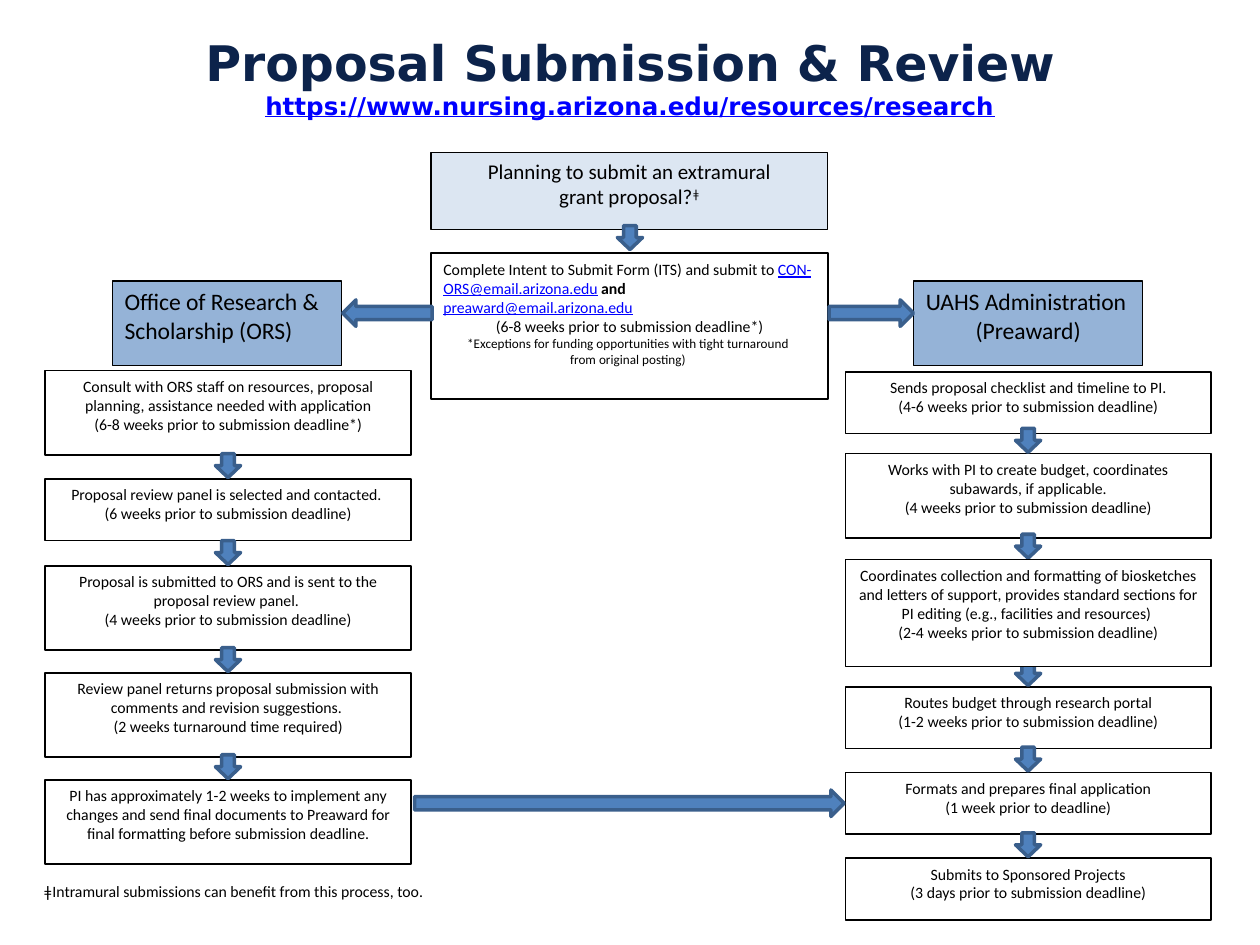
from dataclasses import dataclass

import pptx
import pptx.dml.color
import pptx.enum.shapes
import pptx.enum.text
import pptx.util

Inches = pptx.util.Inches
Shape = pptx.enum.shapes.MSO_SHAPE
Align = pptx.enum.text.PP_ALIGN

BLACK, WHITE, NAVY, LINK = "000000", "FFFFFF", "0C234B", "0000FF"
PALE_BLUE, MID_BLUE = "DCE6F2", "95B3D7"
ARROW_FILL, ARROW_LINE = "4F81BD", "3A5F8C"
STEP_WIDTH, ARROW_WIDTH, ARROW_HEIGHT, ARROW_RISE = 2.9, 0.2, 0.19, 0.2


@dataclass
class Run:
    text: str
    link: bool = False
    bold: bool | None = None
    superscript: bool = False
    break_before: bool = False


@dataclass
class Line:
    runs: list[Run]
    size: float = 9
    align: Align = Align.CENTER
    font: str = "Calibri"
    color: str = BLACK
    bold: bool = False


@dataclass
class Step:
    top: float
    height: float
    lines: list[str]
    fill: str | None = None


def rgb(value: str) -> pptx.dml.color.RGBColor:
    return pptx.dml.color.RGBColor.from_string(value)


def plain(text: str, size: float = 9, align: Align = Align.CENTER) -> Line:
    return Line([Run(text)], size, align)


def write(shape, lines: list[Line], anchor=pptx.enum.text.MSO_ANCHOR.TOP, wrap: bool = True) -> None:
    frame = shape.text_frame
    frame.word_wrap = wrap
    frame.vertical_anchor = anchor
    for index, line in enumerate(lines):
        paragraph = frame.add_paragraph() if index else frame.paragraphs[0]
        paragraph.alignment = line.align
        paragraph.font.name = line.font
        paragraph.font.size = pptx.util.Pt(line.size)
        paragraph.font.bold = line.bold
        paragraph.font.color.rgb = rgb(line.color)
        for part in line.runs:
            if part.break_before:
                paragraph.add_line_break()
            run = paragraph.add_run()
            run.text = part.text
            if part.link:
                run.font.underline = True
                run.font.color.rgb = rgb(LINK)
            if part.bold:
                run.font.bold = True
            if part.superscript:
                run._r.get_or_add_rPr().set("baseline", "30000")


def add_preset(slide, preset, left: float, top: float, width: float, height: float,
               fill: str | None, line: str, weight: float):
    shape = slide.shapes.add_shape(preset, Inches(left), Inches(top), Inches(width), Inches(height))
    shape.shadow.inherit = False
    if fill:
        shape.fill.solid()
        shape.fill.fore_color.rgb = rgb(fill)
    else:
        shape.fill.background()
    shape.line.color.rgb = rgb(line)
    shape.line.width = pptx.util.Pt(weight)
    return shape


def add_box(slide, left: float, top: float, width: float, height: float,
            lines: list[Line], fill: str | None = None, weight: float = 1) -> None:
    write(add_preset(slide, Shape.RECTANGLE, left, top, width, height, fill, BLACK, weight), lines)


def add_arrow(slide, preset, left: float, top: float, width: float, height: float) -> None:
    add_preset(slide, preset, left, top, width, height, ARROW_FILL, ARROW_LINE, 2)


def add_text(slide, left: float, top: float, width: float, height: float, lines: list[Line], **options) -> None:
    box = slide.shapes.add_textbox(Inches(left), Inches(top), Inches(width), Inches(height))
    write(box, lines, **options)


def add_column(slide, left: float, steps: list[Step]) -> None:
    """Draw open steps, the arrows leading to each next step, then filled steps over them."""
    def add_steps(filled: bool) -> None:
        for step in steps:
            if bool(step.fill) == filled:
                add_box(slide, left, step.top, STEP_WIDTH, step.height,
                        [plain(text) for text in step.lines], step.fill)

    add_steps(filled=False)
    for step in steps[1:]:
        add_arrow(slide, Shape.DOWN_ARROW, left + (STEP_WIDTH - ARROW_WIDTH) / 2,
                  step.top - ARROW_RISE, ARROW_WIDTH, ARROW_HEIGHT)
    add_steps(filled=True)


ORS_STEPS = [
    Step(2.94, 0.67, ["Consult with ORS staff on resources, proposal planning, assistance needed with application",
                      "(6-8 weeks prior to submission deadline*)"]),
    Step(3.8, 0.49, ["Proposal review panel is selected and contacted. ",
                     "(6 weeks prior to submission deadline)"]),
    Step(4.49, 0.67, ["Proposal is submitted to ORS and is sent to the proposal review panel. ",
                      "(4 weeks prior to submission deadline)"]),
    Step(5.34, 0.67, ["Review panel returns proposal submission with comments and revision suggestions. ",
                      "(2 weeks turnaround time required)"]),
    Step(6.19, 0.67, ["PI has approximately 1-2 weeks to implement any changes and send final documents "
                      "to Preaward for final formatting before submission deadline."]),
]
PREAWARD_STEPS = [
    Step(2.95, 0.49, ["Sends proposal checklist and timeline to PI.",
                      "(4-6 weeks prior to submission deadline)"]),
    Step(3.6, 0.67, ["Works with PI to create budget, coordinates subawards, if applicable.",
                     "(4 weeks prior to submission deadline)"]),
    Step(4.44, 0.85, ["Coordinates collection and formatting of biosketches and letters of support, provides "
                      "standard sections for PI editing (e.g., facilities and resources) ",
                      "(2-4 weeks prior to submission deadline)"], WHITE),
    Step(5.45, 0.49, ["Routes budget through research portal",
                      "(1-2 weeks prior to submission deadline)"]),
    Step(6.13, 0.49, ["Formats and prepares final application", "(1 week prior to deadline)"]),
    Step(6.81, 0.49, ["Submits to Sponsored Projects", "(3 days prior to submission deadline)"]),
]


def main() -> None:
    deck = pptx.Presentation()
    deck.slide_width, deck.slide_height = Inches(10), Inches(7.5)
    slide = deck.slides.add_slide(deck.slide_layouts[6])

    add_text(slide, 0.75, 0, 8.5, 1.21, [
        Line([Run("Proposal Submission & Review")], 28, font="DejaVu Sans", color=NAVY, bold=True),
        Line([Run("https://www.nursing.arizona.edu/resources/research", link=True)], 14,
             font="DejaVu Sans", color=NAVY, bold=True),
    ], anchor=pptx.enum.text.MSO_ANCHOR.MIDDLE)

    add_box(slide, 3.42, 2.01, 3.15, 1.16, [
        Line([Run("Complete Intent to Submit Form (ITS) and submit to "),
              Run("CON-ORS@email.arizona.edu", link=True), Run(" "), Run("and ", bold=True),
              Run("preaward@email.arizona.edu", link=True)], align=Align.LEFT),
        plain("(6-8 weeks prior to submission deadline*)"),
        Line([Run("*Exceptions for funding opportunities with tight turnaround "),
              Run("from original posting) ", break_before=True)], 7.5),
    ])
    add_box(slide, 3.42, 1.21, 3.15, 0.61, [
        plain("Planning to submit an extramural", 12),
        Line([Run("grant proposal?"), Run("ǂ", superscript=True)], 12),
    ], PALE_BLUE, 0.75)
    add_box(slide, 0.89, 2.23, 1.82, 0.67,
            [plain("Office of Research & Scholarship (ORS)", 13.5, Align.LEFT)], MID_BLUE, 0.75)
    add_box(slide, 7.25, 2.23, 1.82, 0.67,
            [plain("UAHS Administration", 13.5, Align.LEFT), plain("(Preaward)", 13.5)], MID_BLUE, 0.75)

    add_column(slide, 0.36, ORS_STEPS)
    add_column(slide, 6.71, PREAWARD_STEPS)

    add_arrow(slide, Shape.DOWN_ARROW, 4.9, 1.79, ARROW_WIDTH, ARROW_HEIGHT)
    add_arrow(slide, Shape.RIGHT_ARROW, 3.29, 6.27, 3.41, 0.21)
    add_arrow(slide, Shape.RIGHT_ARROW, 6.58, 2.38, 0.67, 0.21)
    add_arrow(slide, Shape.LEFT_ARROW, 2.72, 2.38, 0.71, 0.21)
    add_text(slide, 0.22, 6.95, 3.26, 0.3,
             [plain("ǂIntramural submissions can benefit from this process, too.")], wrap=False)

    deck.save("out.pptx")


if __name__ == "__main__":
    main()
